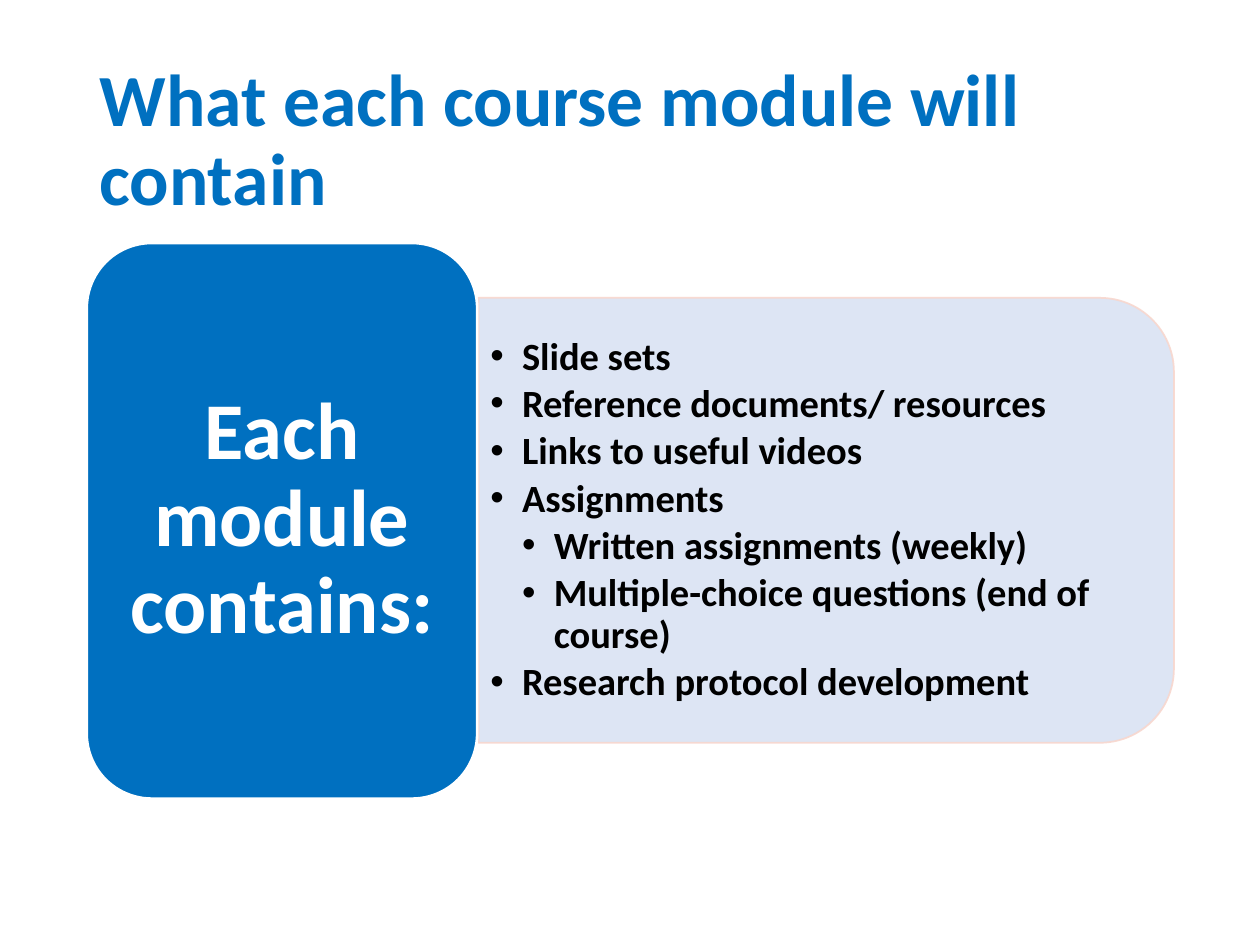
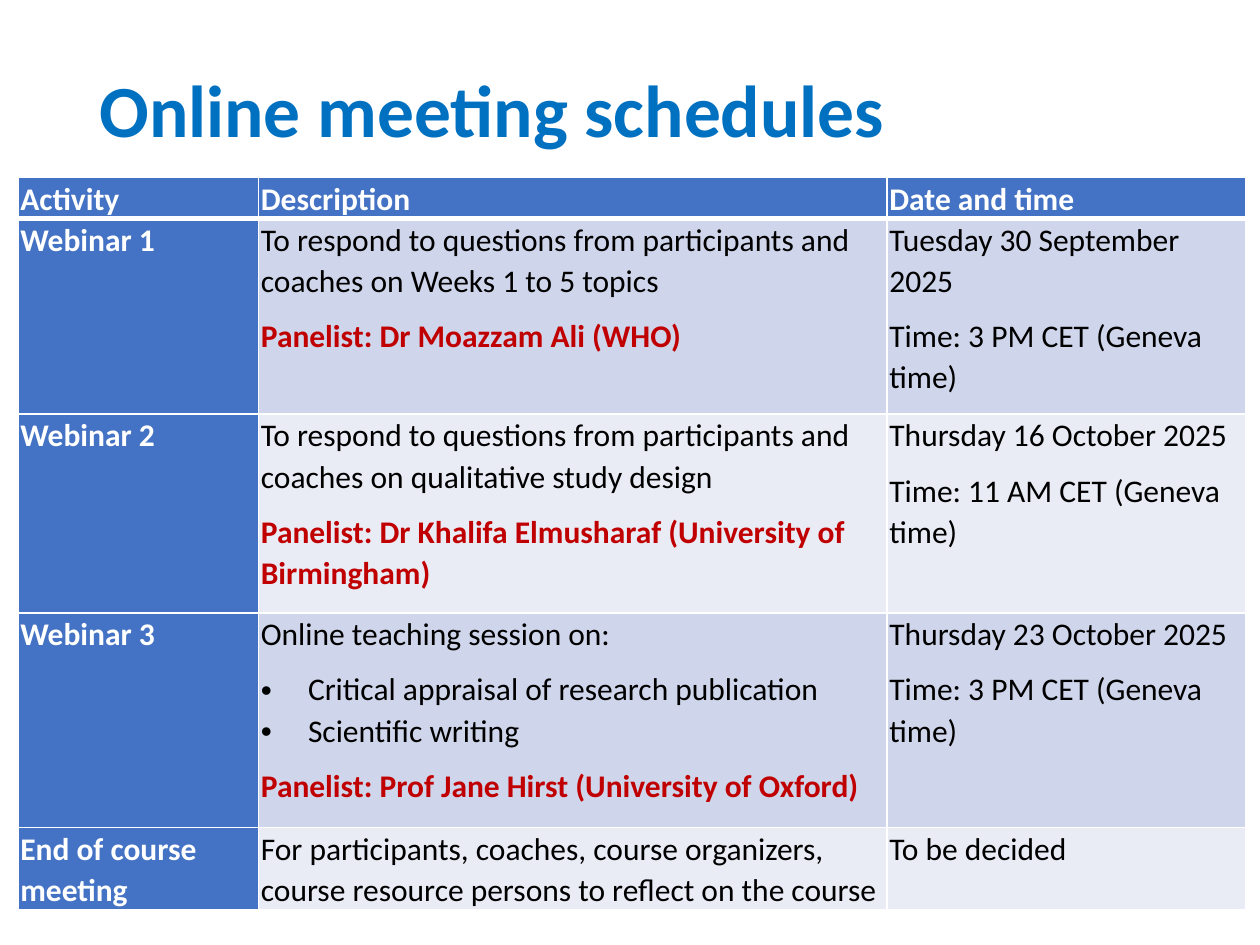
"""Build two course slides: module contents and meeting schedule."""
from lxml import etree
from pptx import Presentation
from pptx.dml.color import RGBColor
from pptx.enum.shapes import MSO_SHAPE
from pptx.enum.text import MSO_ANCHOR, MSO_AUTO_SIZE, PP_ALIGN
from pptx.oxml.ns import qn
from pptx.util import Cm, Pt

ROUND, TAB = MSO_SHAPE.ROUNDED_RECTANGLE, MSO_SHAPE.ROUND_2_SAME_RECTANGLE
MIDDLE, TOP = MSO_ANCHOR.MIDDLE, MSO_ANCHOR.TOP
LEFT, CENTER = PP_ALIGN.LEFT, PP_ALIGN.CENTER
NO_FIT = MSO_AUTO_SIZE.NONE
FONT = "Calibri"
BLUE, HEAD, PALE, PINK = "0070C0", "4472C4", "DAE3F3", "F8D7CE"
WHITE, BLACK, RED = "FFFFFF", "000000", "C00000"
BANDS = ("CFD5EA", "E9EBF5")
MARK = "• "

TOPICS = [
    ("Slide sets", 0),
    ("Reference documents/ resources", 0),
    ("Links to useful videos", 0),
    ("Assignments", 0),
    ("Written assignments (weekly)", 1),
    ("Multiple-choice questions (end of course)", 1),
    ("Research protocol development", 0),
]
COLS = (4.85, 12.67, 7.24)
ROWS = (0.76, 3.94, 4.01, 4.32, 1.52)
PLAN = [
    (["Activity"], ["Description"], ["Date and time"]),
    (["Webinar 1"],
     ["To respond to questions from participants and coaches on Weeks 1 to 5 topics",
      "Panelist: Dr Moazzam Ali (WHO)"],
     ["Tuesday 30 September 2025", "Time: 3 PM CET (Geneva time)"]),
    (["Webinar 2"],
     ["To respond to questions from participants and coaches on qualitative study design",
      "Panelist: Dr Khalifa Elmusharaf (University of Birmingham)"],
     ["Thursday 16 October 2025", "Time: 11 AM CET (Geneva time)"]),
    (["Webinar 3"],
     ["Online teaching session on:",
      MARK + "Critical appraisal of research publication",
      MARK + "Scientific writing",
      "Panelist: Prof Jane Hirst (University of Oxford)"],
     ["Thursday 23 October 2025", "Time: 3 PM CET (Geneva time)"]),
    (["End of course meeting"],
     ["For participants, coaches, course organizers, course resource persons "
      "to reflect on the course"],
     ["To be decided"]),
]


def rgb(code):
    """Turn a hex string into a colour."""
    return RGBColor.from_string(code)


def place(shape, left, top, width, height):
    """Move and size a shape, in centimetres."""
    shape.left, shape.top = Cm(left), Cm(top)
    shape.width, shape.height = Cm(width), Cm(height)


def style(para, size, color, bold=True, align=LEFT, lines=0.9, after=0):
    """Format a paragraph and its runs."""
    para.alignment, para.line_spacing = align, lines
    para.space_before, para.space_after = Pt(0), Pt(after)
    for run in para.runs:
        font = run.font
        font.name, font.size, font.bold = FONT, Pt(size), bold
        font.color.rgb = rgb(color)


def bullet(para, left, hang):
    """Give a paragraph a round bullet and a hanging indent."""
    props = para._p.get_or_add_pPr()
    props.set("marL", str(Cm(left)))
    props.set("indent", str(-Cm(hang)))
    etree.SubElement(props, qn("a:buFont")).set("typeface", "Arial")
    etree.SubElement(props, qn("a:buChar")).set("char", "•")


def fade(color, share):
    """Set the opacity of a solid colour, in percent."""
    for node in color._xFill.iter(qn("a:srgbClr")):
        etree.SubElement(node, qn("a:alpha")).set("val", str(share * 1000))


def add_title(slide, text, top, height):
    """Fill the title placeholder."""
    title = slide.shapes.title
    place(title, 1.75, top, 21.9, height)
    frame = title.text_frame
    frame.text = text
    frame.auto_size, frame.vertical_anchor = NO_FIT, MIDDLE
    style(frame.paragraphs[0], 42, BLUE)


def add_box(slide, kind, spot, fill, line, width):
    """Add a filled and outlined shape."""
    box = slide.shapes.add_shape(kind, *map(Cm, spot))
    box.shadow.inherit = False
    box.fill.solid()
    box.fill.fore_color.rgb = rgb(fill)
    box.line.color.rgb = rgb(line)
    box.line.width = Pt(width)
    return box


def add_panel(slide):
    """Add the pale panel behind the list."""
    panel = add_box(slide, TAB, (12.17, 3.48, 8.97, 14.02), PALE, PINK, 1)
    panel.rotation = 90
    fade(panel.fill.fore_color, 90)
    fade(panel.line.color, 90)
    slide.shapes._spTree.insert(2, panel._element)


def add_label(slide, text):
    """Add the blue label beside the panel."""
    label = add_box(slide, ROUND, (1.75, 4.9, 7.87, 11.2), BLUE, WHITE, 1.5)
    frame = label.text_frame
    frame.text = text
    frame.word_wrap, frame.vertical_anchor = True, MIDDLE
    frame.margin_left = frame.margin_right = Cm(0.4)
    style(frame.paragraphs[0], 46, WHITE, align=CENTER)


def add_list(slide, items):
    """Fill the body placeholder with a two-level list."""
    body = slide.placeholders[1]
    place(body, 9.63, 6.45, 13.59, 8.08)
    frame = body.text_frame
    frame.text = "\n".join(text for text, _ in items)
    frame.auto_size, frame.vertical_anchor = NO_FIT, MIDDLE
    for para, (_, level) in zip(frame.paragraphs, items):
        para.level = level
        bullet(para, 0.64 * (level + 1), 0.64)
        style(para, 22, BLACK, after=3.3)


def edge(cell, head):
    """Draw white borders, thicker below the head row."""
    props = cell._tc.get_or_add_tcPr()
    for spot, side in enumerate("LRTB"):
        wide = 3 if head and side == "B" else 1
        line = etree.Element(qn("a:ln" + side), w=str(Pt(wide)))
        fill = etree.SubElement(line, qn("a:solidFill"))
        etree.SubElement(fill, qn("a:srgbClr")).set("val", WHITE)
        props.insert(spot, line)


def fill_cell(cell, lines, fill, strong):
    """Write and format one table cell."""
    cell.margin_left = cell.margin_right = Cm(0.05)
    cell.margin_top = cell.margin_bottom = 0
    cell.vertical_anchor = TOP
    cell.fill.solid()
    cell.fill.fore_color.rgb = rgb(fill)
    frame = cell.text_frame
    frame.text = "\n".join(line.removeprefix(MARK) for line in lines)
    for para, line, later in zip(frame.paragraphs, lines, lines[1:] + [""]):
        guest = line.startswith("Panelist")
        if line.startswith(MARK):
            bullet(para, 0.95, 0.95)
        color = WHITE if strong else RED if guest else BLACK
        after = 0 if line.startswith(MARK) and later.startswith(MARK) else 8
        style(para, 18, color, strong or guest, lines=1.07, after=after)


def add_plan(slide, rows):
    """Add the meeting table."""
    spot = (0.36, 3.58, sum(COLS), sum(ROWS))
    table = slide.shapes.add_table(len(ROWS), len(COLS), *map(Cm, spot)).table
    for col, width in zip(table.columns, COLS):
        col.width = Cm(width)
    for y, (row, height) in enumerate(zip(rows, ROWS)):
        table.rows[y].height = Cm(height)
        for x, lines in enumerate(row):
            strong = x == 0 or y == 0
            fill = HEAD if strong else BANDS[(y - 1) % 2]
            fill_cell(table.cell(y, x), lines, fill, strong)
            edge(table.cell(y, x), y == 0)


def main():
    """Build and save both slides."""
    deck = Presentation()
    deck.slide_width, deck.slide_height = Cm(25.4), Cm(19.05)

    slide = deck.slides.add_slide(deck.slide_layouts[1])
    add_title(slide, "What each course module will contain", 1.02, 3.68)
    add_panel(slide)
    add_list(slide, TOPICS)
    add_label(slide, "Each module contains:")

    slide = deck.slides.add_slide(deck.slide_layouts[5])
    add_title(slide, "Online meeting schedules", 0.71, 3.15)
    add_plan(slide, PLAN)

    deck.save("out.pptx")


if __name__ == "__main__":
    main()
